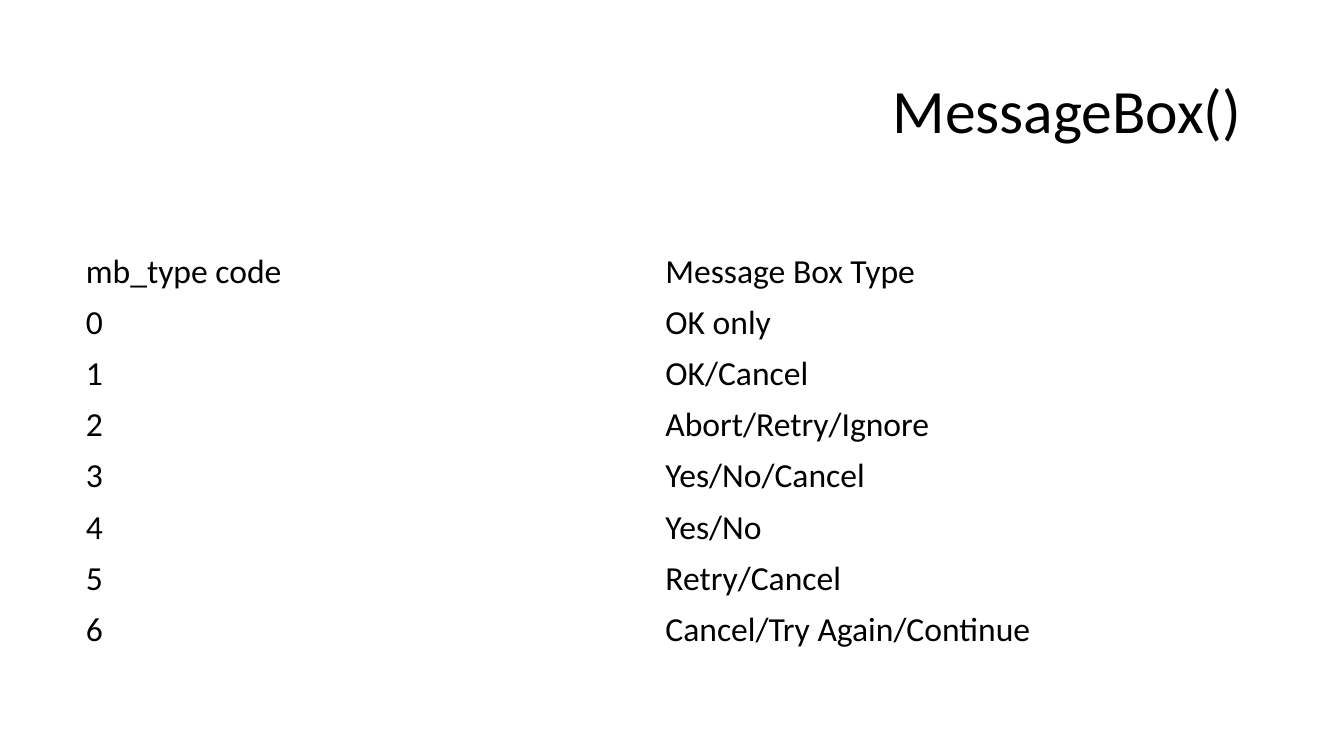
from pptx import Presentation
from pptx.dml.color import RGBColor
from pptx.enum.text import MSO_ANCHOR, PP_ALIGN
from pptx.util import Cm, Pt

MIDDLE = MSO_ANCHOR.MIDDLE
RIGHT = PP_ALIGN.RIGHT
BLACK = RGBColor(0x00, 0x00, 0x00)
BLANK_LAYOUT = 6

BOX_TYPES = [
    "OK only",
    "OK/Cancel",
    "Abort/Retry/Ignore",
    "Yes/No/Cancel",
    "Yes/No",
    "Retry/Cancel",
    "Cancel/Try Again/Continue",
]


def set_all(target, values):
    for name, value in values.items():
        setattr(target, name, value)


class SlideBuilder:
    font_name = "Calibri"
    color = BLACK

    def __init__(self, page):
        self.page = page

    def add_span(self, para, text, size):
        span = para.add_run()
        span.text = text
        set_all(span.font, {"name": self.font_name, "size": Pt(size), "bold": False})
        span.font.color.rgb = self.color

    def add_title(self, text, left, top, width, height):
        box = self.page.shapes.add_textbox(Cm(left), Cm(top), Cm(width), Cm(height))
        set_all(box.text_frame, {"word_wrap": True, "vertical_anchor": MIDDLE})
        para = box.text_frame.paragraphs[0]
        set_all(para, {"alignment": RIGHT, "line_spacing": 0.9})
        self.add_span(para, text, 44)

    def add_plain_table(self, rows, left, top, width, row_height):
        """Add a table with equal columns and no fills."""
        frame = self.page.shapes.add_table(
            len(rows), len(rows[0]), Cm(left), Cm(top), Cm(width), Cm(row_height * len(rows))
        )
        table = frame.table
        set_all(table, {"first_row": False, "horz_banding": False})
        for row_index, row in enumerate(rows):
            for column_index, text in enumerate(row):
                cell = table.cell(row_index, column_index)
                cell.fill.background()
                cell.vertical_anchor = MIDDLE
                self.add_span(cell.text_frame.paragraphs[0], text, 24)


def main():
    deck = Presentation()
    set_all(deck, {"slide_width": Cm(33.87), "slide_height": Cm(19.05)})
    page = deck.slides.add_slide(deck.slide_layouts[BLANK_LAYOUT])
    builder = SlideBuilder(page)
    builder.add_title("MessageBox()", 2.33, 1.01, 29.21, 3.68)
    codes = [(str(code), box_type) for code, box_type in enumerate(BOX_TYPES)]
    builder.add_plain_table(
        [("mb_type code", "Message Box Type"), *codes], 1.91, 6.2, 29.21, 1.29
    )
    deck.save("out.pptx")


if __name__ == "__main__":
    main()
